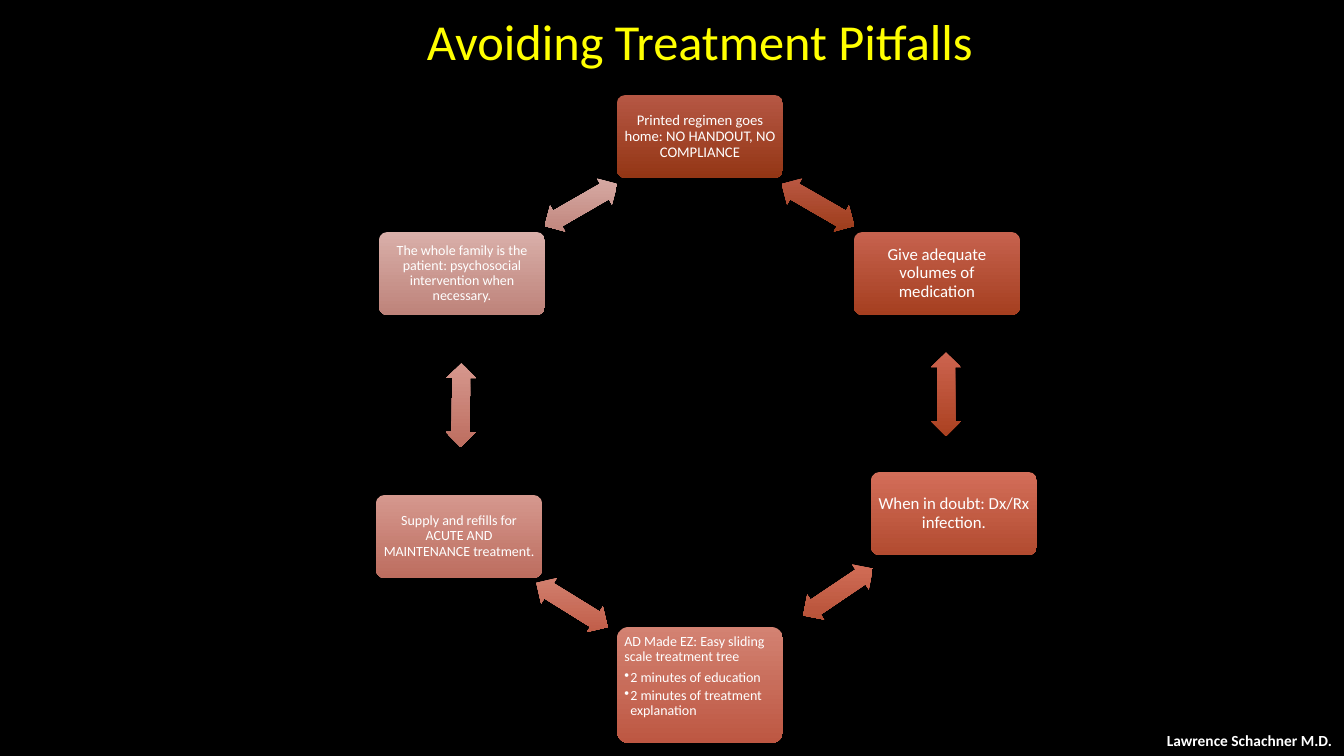
import pptx
import pptx.dml.color
import pptx.enum.shapes
import pptx.enum.text
import pptx.oxml
import pptx.oxml.ns
import pptx.util

PX = 914400 / 100.8
COLOURS = {"background": "000000", "title": "FFFF00", "text": "FFFFFF"}
ALIGN = pptx.enum.text.PP_ALIGN
ANCHOR = pptx.enum.text.MSO_ANCHOR
SHAPES = pptx.enum.shapes.MSO_SHAPE


def add_gradient_shape(kind, frame, adjustments, top_colour, bottom_colour, rotation=0):
    shape = page.shapes.add_shape(kind, *[round(n * PX) for n in frame])
    shape.rotation = rotation
    for index, value in enumerate(adjustments):
        shape.adjustments[index] = value
    shape.shadow.inherit = False
    shape.line.fill.background()
    shape.fill.gradient()
    shape.fill.gradient_angle = 270
    for stop, position, colour in zip(shape.fill.gradient_stops, (0, 1), (top_colour, bottom_colour)):
        stop.position = position
        stop.color.rgb = pptx.dml.color.RGBColor.from_string(colour)
    # Shading runs from top to bottom of the page whatever the rotation
    shape.element.spPr.find(pptx.oxml.ns.qn("a:gradFill")).set("rotWithShape", "0")
    return shape


def write_text(box, lines, size, colour="text", bold=False, align=ALIGN.CENTER,
               anchor=ANCHOR.MIDDLE, wrap=True, inset=None, spacing=None):
    frame = box.text_frame
    frame.word_wrap = wrap
    frame.vertical_anchor = anchor
    if inset is not None:
        frame.margin_left = frame.margin_right = round(inset * PX)
        frame.margin_top = frame.margin_bottom = round(inset * PX)
    for index, line in enumerate(lines):
        para = frame.paragraphs[0] if index == 0 else frame.add_paragraph()
        para.alignment = align
        if spacing:
            para.line_spacing = spacing
        if len(lines) > 1:
            para.space_after = pptx.util.Pt(2 if index else 4)
        if index:
            properties = para._p.get_or_add_pPr()
            properties.set("marL", str(round(6 * PX)))
            properties.set("indent", str(round(-6 * PX)))
            properties.append(pptx.oxml.parse_xml(
                f'<a:buChar {pptx.oxml.ns.nsdecls("a")} char="•"/>'))
        span = para.add_run()
        span.text = line
        span.font.name = "Calibri"
        span.font.size = pptx.util.Pt(size)
        span.font.bold = bold
        span.font.color.rgb = pptx.dml.color.RGBColor.from_string(COLOURS[colour])


deck = pptx.Presentation()
deck.slide_width = round(1344 * PX)
deck.slide_height = round(756 * PX)
page = deck.slides.add_slide(deck.slide_layouts[6])
page.background.fill.solid()
page.background.fill.fore_color.rgb = pptx.dml.color.RGBColor.from_string(COLOURS["background"])

# Steps of the cycle, clockwise: left, top, height, gradient, size, lines
steps = [
    (617, 95, 83, "B65744", "933615", 10.5,
     ["Printed regimen goes home: NO HANDOUT, NO COMPLIANCE"]),
    (854, 232, 83, "C6624E", "A53F20", 12, ["Give adequate volumes of medication"]),
    (871, 472, 83, "D36E59", "B24B30", 12, ["When in doubt: Dx/Rx infection."]),
    (617, 627, 116, "D38272", "BD5742", 10,
     ["AD Made EZ: Easy sliding scale treatment tree",
      "2 minutes of education", "2 minutes of treatment explanation"]),
    (376, 495, 83, "D5988E", "BD6D5F", 10,
     ["Supply and refills for ACUTE AND MAINTENANCE treatment."]),
    (379, 232, 83, "D9AFA9", "BE837A", 10,
     ["The whole family is the patient: psychosocial intervention when necessary."]),
]
for left, top, height, light, dark, size, lines in steps:
    step = add_gradient_shape(SHAPES.ROUNDED_RECTANGLE, (left, top, 166, height), [0.1], light, dark)
    listed = len(lines) > 1
    write_text(step, lines, size, inset=4 if size == 10 else 5, spacing=0.9,
               align=ALIGN.LEFT if listed else ALIGN.CENTER,
               anchor=ANCHOR.TOP if listed else ANCHOR.MIDDLE)

# Arrows between the steps: centre, rotation, gradient
arrows = [
    (818, 205, 30, "BD5B47", "9A3916"),
    (946, 394, 90, "CC644F", "AB4121"),
    (838, 592, 146, "D5715C", "B34E33"),
    (572, 605, 211.8, "D48474", "BE5943"),
    (461, 405, 270.6, "D6988E", "BD6D5F"),
    (581, 205, 330, "D9AEA8", "BE8279"),
]
for centre_x, centre_y, rotation, light, dark in arrows:
    add_gradient_shape(SHAPES.LEFT_RIGHT_ARROW, (centre_x - 42, centre_y - 15, 84, 30),
                       [0.6, 0.5], light, dark, rotation)

# Title and author
title = page.shapes.add_textbox(*[round(n * PX) for n in (218, -23, 964, 126)])
write_text(title, ["Avoiding Treatment Pitfalls"], 36, colour="title")
author = page.shapes.add_textbox(*[round(n * PX) for n in (1157, 726, 187, 29)])
write_text(author, ["Lawrence Schachner M.D."], 11, bold=True, align=ALIGN.LEFT,
           anchor=ANCHOR.TOP, wrap=False)

deck.save("out.pptx")
